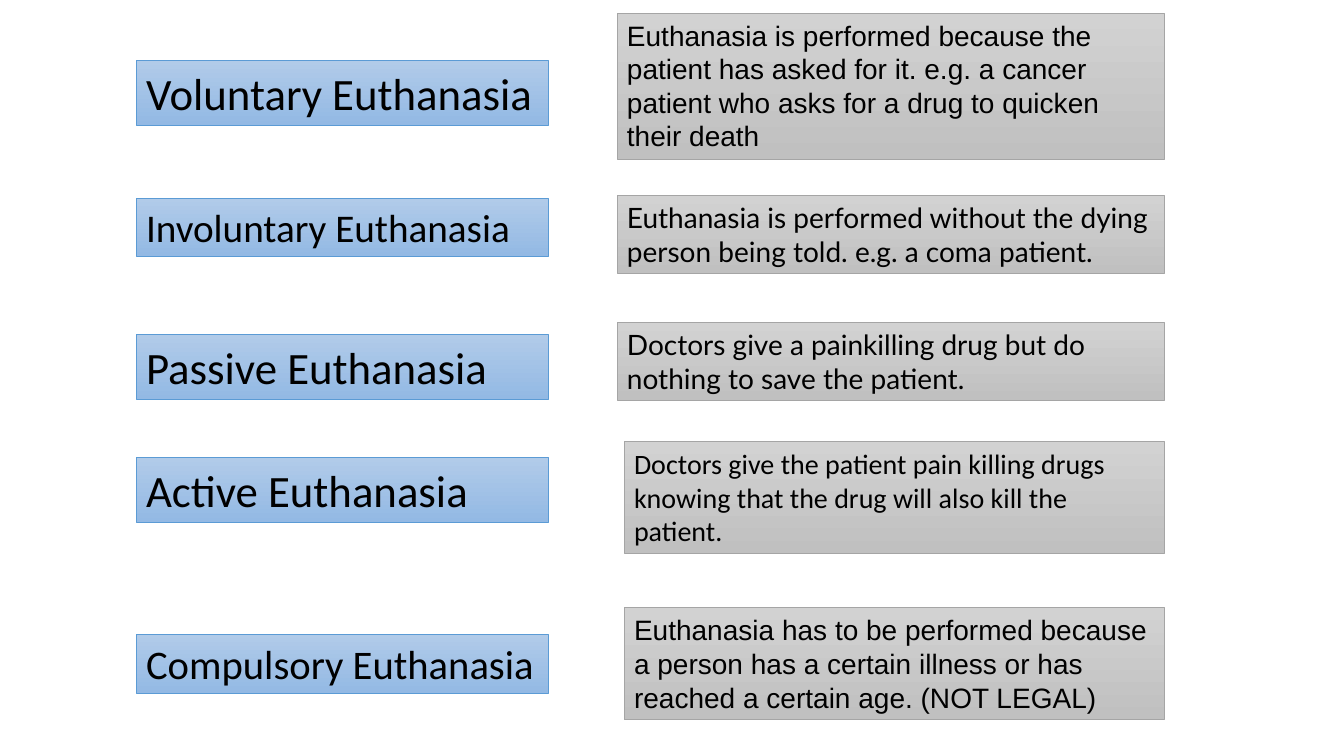
from dataclasses import dataclass

from pptx import Presentation
from pptx import util as u
from pptx.dml.color import RGBColor
from pptx.enum import shapes, text


@dataclass(frozen=True)
class Theme:
    term_gradient: tuple = ("B1CBE9", "93B9E4")
    term_line: str = "5B9BD5"
    meaning_gradient: tuple = ("D2D2D2", "C0C0C0")
    meaning_line: str = "A5A5A5"
    ink: str = "000000"
    term_font: str = "Calibri"
    large: int = 32
    medium: int = 29
    small: int = 28
    body: int = 20
    line_width: float = 0.5


THEME = Theme()
TERM_LEFT, TERM_WIDTH = 1.35, 4.09
MEANING_RIGHT = 11.55

# Term: wording, size, top, height. Meaning: wording, font, left, top, height.
TYPES = [
    (("Voluntary Euthanasia", THEME.large, 0.6, 0.64),
     ("Euthanasia is performed because the patient has asked for it. e.g. a cancer "
      "patient who asks for a drug to quicken their death", "Arial", 6.12, 0.13, 1.45)),
    (("Involuntary Euthanasia", THEME.small, 1.97, 0.57),
     ("Euthanasia is performed without the dying person being told. e.g. a coma patient.",
      "Lato", 6.12, 1.94, 0.77)),
    (("Passive Euthanasia", THEME.large, 3.32, 0.64),
     ("Doctors give a painkilling drug but do nothing to save the patient.",
      "Lato", 6.12, 3.2, 0.77)),
    (("Active Euthanasia", THEME.large, 4.54, 0.64),
     ("Doctors give the patient pain killing drugs knowing that the drug will also "
      "kill the patient.", "Calibri", 6.19, 4.38, 1.11)),
    (("Compulsory Euthanasia", THEME.medium, 6.29, 0.59),
     ("Euthanasia has to be performed because a person has a certain illness or has "
      "reached a certain age. (NOT LEGAL)", "Arial", 6.19, 6.03, 1.11)),
]


def write_text(shape, wording, *, font, size, color=THEME.ink):
    frame = shape.text_frame
    frame.word_wrap = True
    frame.auto_size = text.MSO_AUTO_SIZE.SHAPE_TO_FIT_TEXT
    frame.vertical_anchor = text.MSO_ANCHOR.TOP
    paragraph = frame.paragraphs[0]
    paragraph.alignment = text.PP_ALIGN.LEFT
    run = paragraph.add_run()
    run.text = wording
    run.font.name = font
    run.font.size = u.Pt(size)
    run.font.color.rgb = RGBColor.from_string(color)


def add_panel(slide, box, gradient, line):
    """Add a rectangle that shades from top to bottom."""
    panel = slide.shapes.add_shape(
        shapes.MSO_SHAPE.RECTANGLE, *(u.Inches(length) for length in box))
    panel.shadow.inherit = False
    panel.fill.gradient()
    panel.fill.gradient_angle = 270
    for stop, color in zip(panel.fill.gradient_stops, gradient):
        stop.color.rgb = RGBColor.from_string(color)
    panel.line.color.rgb = RGBColor.from_string(line)
    panel.line.width = u.Pt(THEME.line_width)
    return panel


def add_term(slide, box, wording, size):
    panel = add_panel(slide, box, THEME.term_gradient, THEME.term_line)
    write_text(panel, wording, font=THEME.term_font, size=size)


def add_meaning(slide, box, wording, font):
    panel = add_panel(slide, box, THEME.meaning_gradient, THEME.meaning_line)
    write_text(panel, wording, font=font, size=THEME.body)


def main():
    presentation = Presentation()
    presentation.slide_width = u.Inches(13.33)
    presentation.slide_height = u.Inches(7.5)
    slide = presentation.slides.add_slide(presentation.slide_layouts[6])
    for (term, size, term_top, term_height), (meaning, font, left, top, height) in TYPES:
        add_term(slide, (TERM_LEFT, term_top, TERM_WIDTH, term_height), term, size)
        add_meaning(slide, (left, top, MEANING_RIGHT - left, height), meaning, font)
    presentation.save("out.pptx")


if __name__ == "__main__":
    main()
